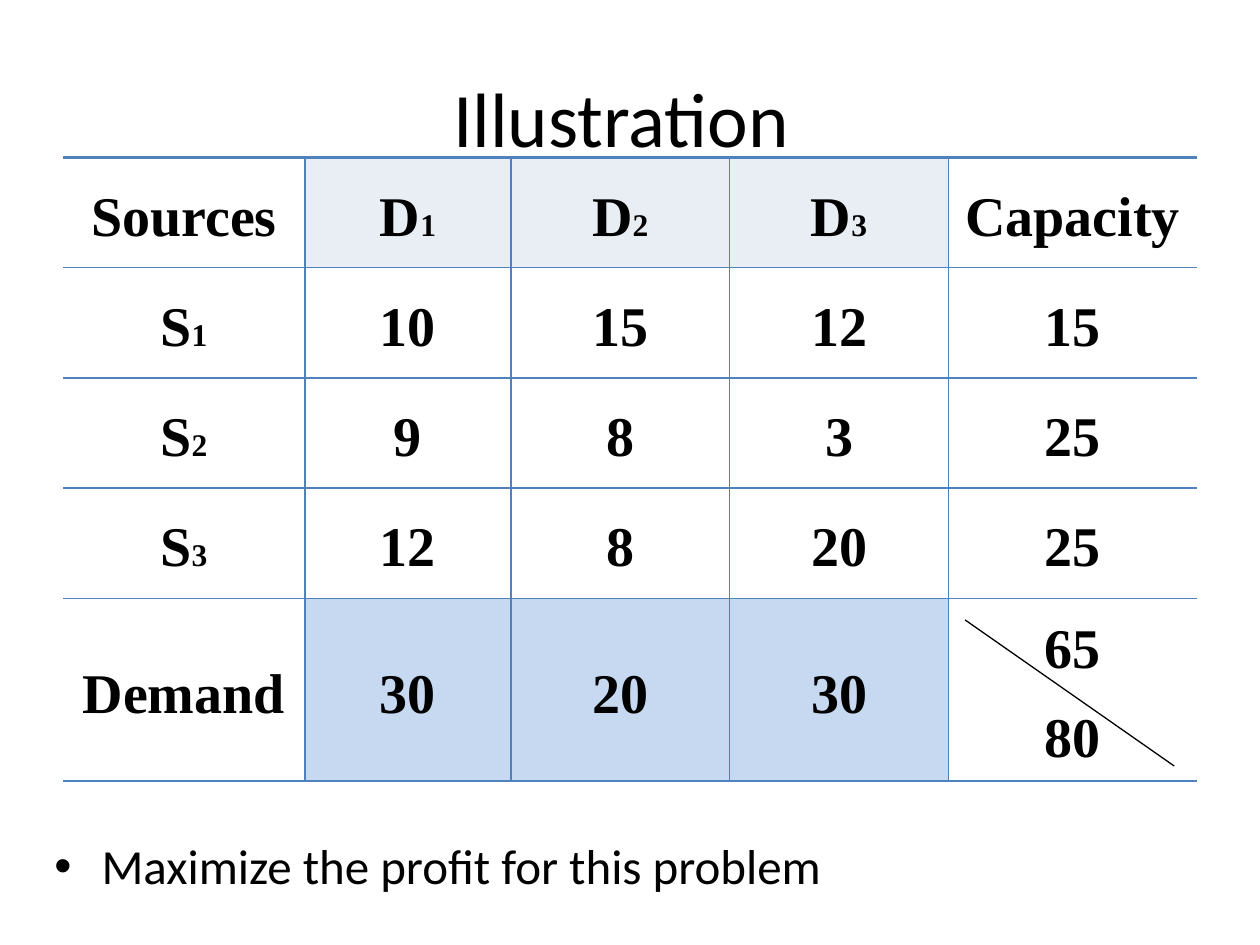
from lxml import etree
from pptx import Presentation
from pptx.dml.color import RGBColor
from pptx.enum.shapes import MSO_CONNECTOR
from pptx.enum.text import MSO_ANCHOR, PP_ALIGN
from pptx.oxml.ns import qn
from pptx.util import Pt

CENTER = PP_ALIGN.CENTER
MIDDLE = MSO_ANCHOR.MIDDLE
STRAIGHT = MSO_CONNECTOR.STRAIGHT

BLACK = RGBColor(0x00, 0x00, 0x00)
WHITE = RGBColor(0xFF, 0xFF, 0xFF)
GRID_BLUE = RGBColor(0x4F, 0x81, 0xBD)
HEADER_FILL = RGBColor(0xE9, 0xED, 0xF4)
DEMAND_FILL = RGBColor(0xC6, 0xD9, 0xF1)

ROWS = [
    ["Sources", "D_1", "D_2", "D_3", "Capacity"],
    ["S_1", "10", "15", "12", "15"],
    ["S_2", "9", "8", "3", "25"],
    ["S_3", "12", "8", "20", "25"],
    ["Demand", "30", "20", "30", "65\n80"],
]
COLUMN_WIDTHS = [138.3, 117.7, 125, 125, 142]
ROW_HEIGHTS = [63, 63, 63, 63, 64]


def style_font(font, name, size, bold=False):
    """Set the typeface, size and weight of black text."""
    font.name = name
    font.size = Pt(size)
    font.bold = bold
    font.color.rgb = BLACK


def add_text(slide, box, text, size):
    """Add a one-paragraph wrapping text box and return its frame."""
    frame = slide.shapes.add_textbox(*map(Pt, box)).text_frame
    frame.word_wrap = True
    paragraph = frame.paragraphs[0]
    paragraph.text = text
    return frame, paragraph


def add_title(slide, box, text):
    """Place the centred slide title."""
    frame, paragraph = add_text(slide, box, text, 44)
    frame.vertical_anchor = MIDDLE
    paragraph.alignment = CENTER
    style_font(paragraph.font, "Calibri", 44)


def add_bullet(slide, box, text):
    """Place the bulleted task statement."""
    paragraph = add_text(slide, box, text, 28)[1]
    properties = paragraph._p.get_or_add_pPr()
    properties.set("marL", str(Pt(27)))
    properties.set("indent", str(Pt(-27)))
    etree.SubElement(properties, qn("a:buFont"), typeface="Arial")
    etree.SubElement(properties, qn("a:buChar"), char="•")
    style_font(paragraph.font, "Calibri", 28)


def set_border(cell, side, width):
    """Draw one cell edge, or hide it when the width is zero."""
    properties = cell._tc.get_or_add_tcPr()
    line = etree.SubElement(properties, qn(f"a:ln{side}"), w=str(Pt(width)))
    if width:
        fill = etree.SubElement(line, qn("a:solidFill"))
        etree.SubElement(fill, qn("a:srgbClr"), val=str(GRID_BLUE))
    else:
        etree.SubElement(line, qn("a:noFill"))


def fill_cell(cell, row, column):
    """Colour a cell according to its place in the table."""
    inner = 0 < column < len(COLUMN_WIDTHS) - 1
    color = None
    if row == 3:
        color = WHITE
    elif inner:
        color = {0: HEADER_FILL, len(ROWS) - 1: DEMAND_FILL}.get(row)
    if color is None:
        cell.fill.background()
    else:
        cell.fill.solid()
        cell.fill.fore_color.rgb = color


def write_cell(cell, text):
    """Write centred lines, with the part after an underscore smaller."""
    cell.vertical_anchor = MIDDLE
    cell.margin_left = cell.margin_right = Pt(6.75)
    cell.margin_top = cell.margin_bottom = Pt(3)
    frame = cell.text_frame
    for index, line in enumerate(text.split("\n")):
        paragraph = frame.add_paragraph() if index else frame.paragraphs[0]
        paragraph.alignment = CENTER
        paragraph.line_spacing = 1.15
        paragraph.space_after = Pt(10)
        for part, size in zip(line.split("_"), (32, 18)):
            run = paragraph.add_run()
            run.text = part
            style_font(run.font, "Times New Roman", size, bold=True)


def add_transport_table(slide, box):
    """Place the profit table and the diagonal across its totals cell."""
    left, top = box[:2]
    table = slide.shapes.add_table(
        len(ROWS), len(COLUMN_WIDTHS), *map(Pt, box)
    ).table
    table.first_row = False
    table.horz_banding = False
    for column, width in zip(table.columns, COLUMN_WIDTHS):
        column.width = Pt(width)
    for row, height in zip(table.rows, ROW_HEIGHTS):
        row.height = Pt(height)
    last_column = len(COLUMN_WIDTHS) - 1
    for row, texts in enumerate(ROWS):
        for column, text in enumerate(texts):
            cell = table.cell(row, column)
            set_border(cell, "L", 1 if column else 0)
            set_border(cell, "R", 1 if column < last_column else 0)
            set_border(cell, "T", 1 if row else 2.25)
            set_border(cell, "B", 1)
            fill_cell(cell, row, column)
            write_cell(cell, text)

    diagonal = slide.shapes.add_connector(
        STRAIGHT, Pt(left + 515.5), Pt(top + 264.25),
        Pt(left + 635), Pt(top + 347.75),
    )
    diagonal.line.color.rgb = BLACK
    diagonal.line.width = Pt(0.75)
    etree.SubElement(diagonal._element.spPr, qn("a:effectLst"))


def main():
    """Build and save the slide."""
    presentation = Presentation()
    presentation.slide_width = Pt(720)
    presentation.slide_height = Pt(540)
    slide = presentation.slides.add_slide(presentation.slide_layouts[6])
    add_title(slide, (36, 21.6, 648, 90), "Illustration ")
    add_bullet(slide, (24, 474, 670, 83.5), "Maximize the profit for this problem")
    add_transport_table(slide, (36, 90, 648, 316))
    presentation.save("out.pptx")


if __name__ == "__main__":
    main()
